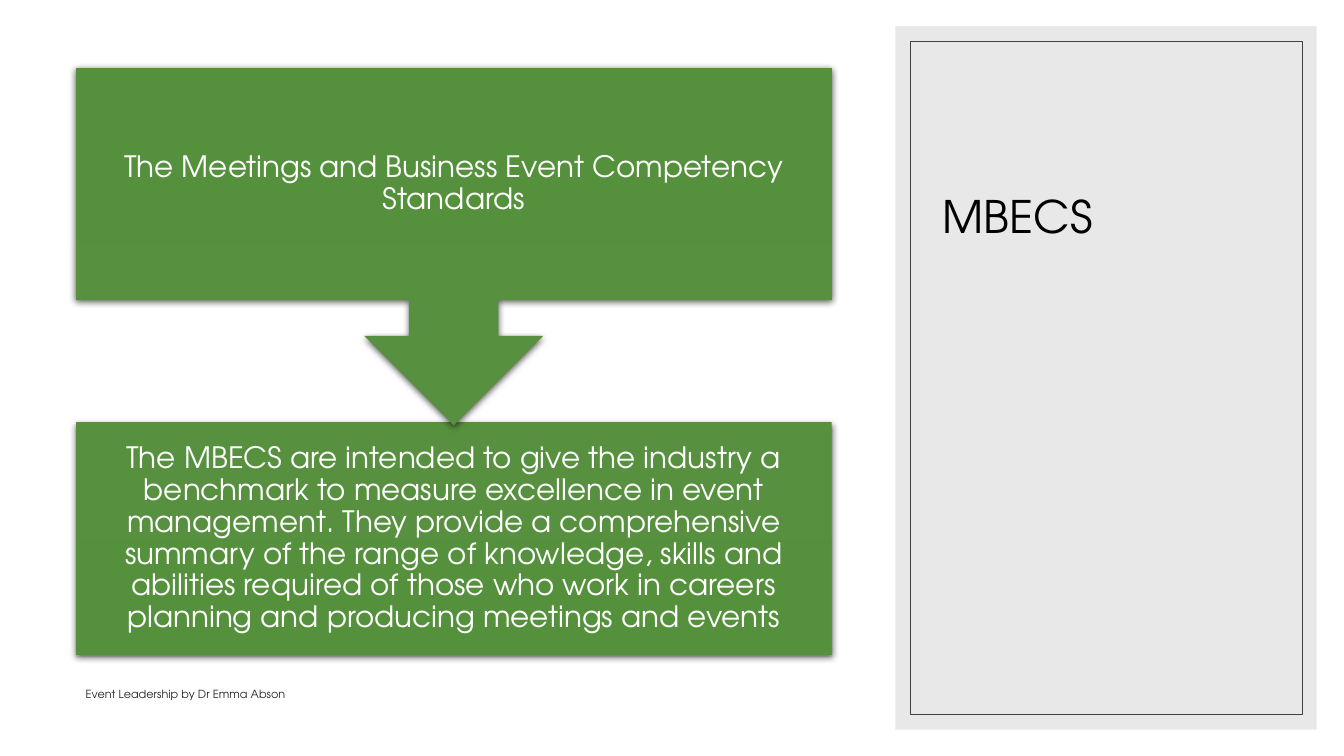
from lxml import etree
from pptx import Presentation
from pptx import util as u
from pptx.dml.color import RGBColor
from pptx.enum import shapes, text
from pptx.oxml import parse_xml
from pptx.oxml.ns import nsdecls, qn

HUES = {"panel": "D9D9D9", "frame": "404040", "title": "000000", "note": "262626",
        "top": "57903F", "end": "55913C", "white": "FFFFFF"}
KIND = shapes.MSO_SHAPE
SIDE = text.PP_ALIGN
EDGE = text.MSO_ANCHOR


class Deck:
    """Style and current slide, with one method per kind of element."""

    def __init__(self):
        self.font = "TeX Gyre Adventor"
        self.prs = Presentation()
        self.prs.slide_width = u.Inches(13.33)
        self.prs.slide_height = u.Inches(7.5)
        self.slide = self.prs.slides.add_slide(self.prs.slide_layouts[5])

    def hue(self, name):
        return RGBColor.from_string(HUES[name])

    def shape(self, kind, box):
        item = self.slide.shapes.add_shape(kind, *map(u.Inches, box))
        item.shadow.inherit = False
        item.fill.background()
        item.line.fill.background()
        return item

    def panel(self, box):
        item = self.shape(KIND.RECTANGLE, box)
        item.fill.solid()
        item.fill.fore_color.rgb = self.hue("panel")
        tint = item._element.spPr.find(".//" + qn("a:srgbClr"))
        etree.SubElement(tint, qn("a:alpha"), val="60000")

    def frame(self, box):
        item = self.shape(KIND.RECTANGLE, box)
        item.line.color.rgb = self.hue("frame")
        item.line.width = u.Pt(0.5)

    def block(self, kind, box, turn=0):
        item = self.shape(kind, box)
        item.rotation = turn
        item.fill.gradient()
        item.fill.gradient_angle = 270
        for stop, name in zip(item.fill.gradient_stops, ("top", "end")):
            stop.color.rgb = self.hue(name)
        glow = item._element.spPr.find(qn("a:effectLst"))
        glow.append(parse_xml(
            f'<a:outerShdw {nsdecls("a")} blurRad="{u.Pt(4.5)}" dist="{u.Pt(1.5)}" '
            'dir="5400000" rotWithShape="0"><a:srgbClr val="000000">'
            '<a:alpha val="63000"/></a:srgbClr></a:outerShdw>'))

    def words(self, item, line, size, name, edge, side=SIDE.LEFT, after=0, lead=1.0):
        frame = item.text_frame
        frame.word_wrap = True
        frame.auto_size = text.MSO_AUTO_SIZE.NONE
        frame.vertical_anchor = edge
        para = frame.paragraphs[0]
        para.alignment = side
        para.space_after = u.Pt(after)
        para.line_spacing = lead
        run = para.add_run()
        run.text = line
        run.font.name = self.font
        run.font.size = u.Pt(size)
        run.font.color.rgb = self.hue(name)
        return frame

    def title(self, line, box):
        item = self.slide.shapes.title
        item.left, item.top, item.width, item.height = map(u.Inches, box)
        self.slide.shapes._spTree.append(item._element)
        self.words(item, line, 32, "title", EDGE.BOTTOM)

    def note(self, line, box):
        item = self.slide.shapes.add_textbox(*map(u.Inches, box))
        self.words(item, line, 8, "note", EDGE.BOTTOM, after=6)

    def label(self, line, box):
        item = self.slide.shapes.add_textbox(*map(u.Inches, box))
        frame = self.words(item, line, 21, "white", EDGE.MIDDLE, SIDE.CENTER, 7.35, 0.9)
        frame.margin_left = frame.margin_right = u.Inches(0.16)
        frame.margin_top = frame.margin_bottom = u.Inches(0.16)


def main():
    deck = Deck()
    deck.panel((8.88, 0.26, 4.18, 6.98))
    deck.frame((9.03, 0.41, 3.89, 6.68))
    deck.title("MBECS", (9.25, 0.66, 3.46, 1.8))
    deck.note("Event Leadership by Dr Emma Abson", (0.75, 6.6, 5.01, 0.4))

    left, wide, high = 0.75, 7.5, 2.31
    first, last = 0.67, 4.19
    deck.block(KIND.RECTANGLE, (left, last, wide, high))
    deck.label("The MBECS are intended to give the industry a benchmark to measure "
               "excellence in event management. They provide a comprehensive summary "
               "of the range of knowledge, skills and abilities required of those who "
               "work in careers planning and producing meetings and events",
               (left, last, wide, high))
    deck.block(KIND.UP_ARROW_CALLOUT, (left, first, wide, 3.55), 180)
    deck.label("The Meetings and Business Event Competency Standards",
               (left, first, wide, high))
    deck.prs.save("out.pptx")


if __name__ == "__main__":
    main()
